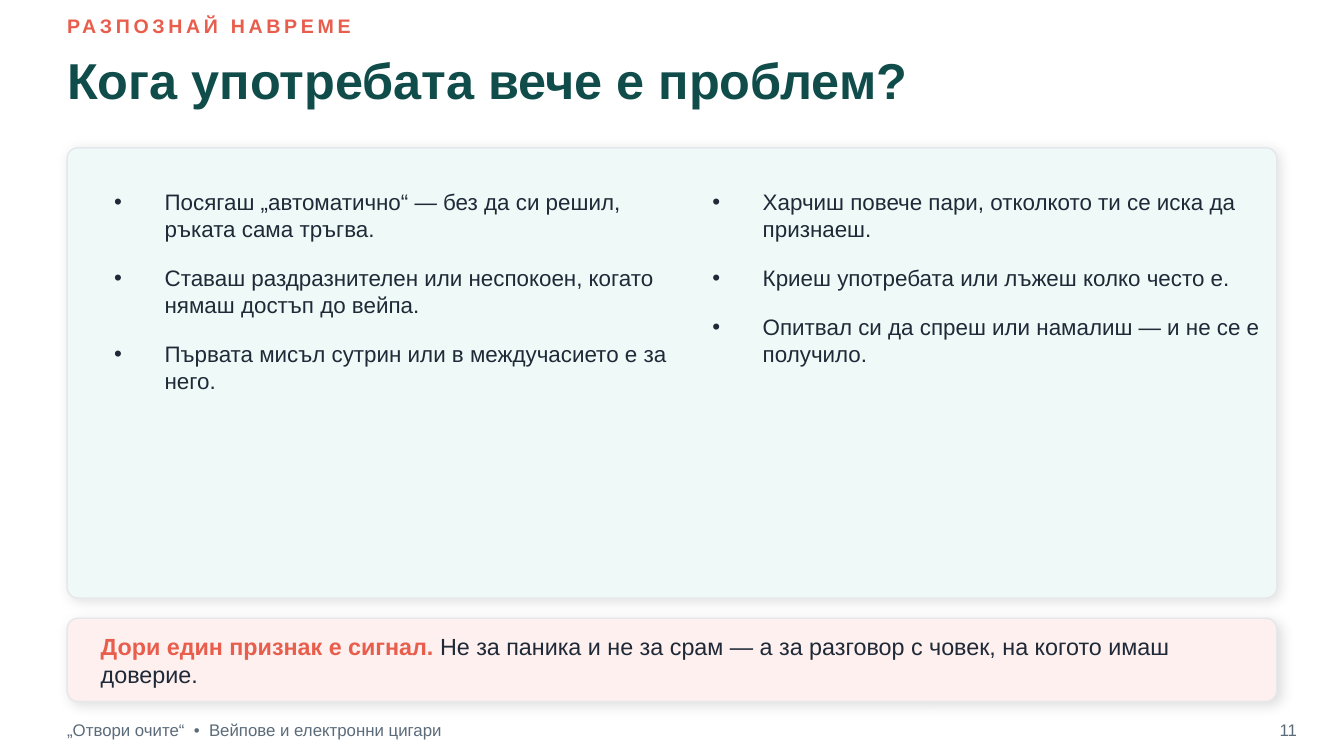
"""Build the slide on recognising when vaping has become a problem."""
import lxml.etree
import pptx
import pptx.dml.color
import pptx.enum.shapes
import pptx.enum.text
import pptx.oxml.ns
import pptx.util

RGBColor = pptx.dml.color.RGBColor
CORAL = RGBColor(0xE8, 0x5D, 0x4C)
TEAL = RGBColor(0x0F, 0x4C, 0x4A)
INK = RGBColor(0x1F, 0x29, 0x37)
SLATE = RGBColor(0x5B, 0x6B, 0x7A)
MINT = RGBColor(0xEF, 0xFA, 0xF8)
BLUSH = RGBColor(0xFD, 0xF0, 0xEE)
BORDER = RGBColor(0xE5, 0xE7, 0xEB)
WHITE = RGBColor(0xFF, 0xFF, 0xFF)

FONT = "Arial"
SLIDE_WIDTH = 10
SLIDE_HEIGHT = SLIDE_WIDTH * 9 / 16
MARGIN = 0.5
CONTENT_WIDTH = SLIDE_WIDTH - 2 * MARGIN
CORNER_RADIUS = 0.08
BULLET_INDENT = pptx.util.Pt(27)
COLUMN_LEFT, COLUMN_TOP, COLUMN_WIDTH, COLUMN_HEIGHT = 0.85, 1.4, 4.15, 2.9
COLUMN_GAP = 0.3
CALLOUT_TOP, CALLOUT_HEIGHT = 4.6, 0.62
FOOTER_TOP, FOOTER_HEIGHT = 5.28, 0.3

EYEBROW = "РАЗПОЗНАЙ НАВРЕМЕ"
TITLE = "Кога употребата вече е проблем?"
SIGNS = [
    [
        "Посягаш „автоматично“ — без да си решил, ръката сама тръгва.",
        "Ставаш раздразнителен или неспокоен, когато нямаш достъп до вейпа.",
        "Първата мисъл сутрин или в междучасието е за него.",
    ],
    [
        "Харчиш повече пари, отколкото ти се иска да признаеш.",
        "Криеш употребата или лъжеш колко често е.",
        "Опитвал си да спреш или намалиш — и не се е получило.",
    ],
]
CALLOUT = [
    ("Дори един признак е сигнал. ", CORAL, True, 0),
    ("Не за паника и не за срам — а за разговор с човек, на когото имаш доверие.", INK, False, 0),
]
WIDE_SPACE = (" ", SLATE, False, 2.5)
FOOTER = [
    ("„Отвори очите“", SLATE, False, 0),
    WIDE_SPACE,
    ("•", SLATE, False, 0),
    WIDE_SPACE,
    ("Вейпове и електронни цигари", SLATE, False, 0),
]
PAGE_NUMBER = "11"


def inches(box):
    return [pptx.util.Inches(length) for length in box]


def add_card(slide, box, color):
    shape = slide.shapes.add_shape(pptx.enum.shapes.MSO_SHAPE.ROUNDED_RECTANGLE, *inches(box))
    shape.adjustments[0] = CORNER_RADIUS / box[3]
    shape.fill.solid()
    shape.fill.fore_color.rgb = color
    shape.line.color.rgb = BORDER
    shape.line.width = pptx.util.Pt(0.75)
    shape.shadow.inherit = False
    qn = pptx.oxml.ns.qn
    effects = shape.element.spPr.find(qn("a:effectLst"))
    shadow = lxml.etree.SubElement(
        effects, qn("a:outerShdw"), blurRad=str(pptx.util.Pt(7)),
        dist=str(pptx.util.Pt(2)), dir=str(45 * 60000), algn="bl", rotWithShape="0")
    black = lxml.etree.SubElement(shadow, qn("a:srgbClr"), val="000000")
    lxml.etree.SubElement(black, qn("a:alpha"), val="13000")


def add_bullet(paragraph):
    properties = paragraph._p.get_or_add_pPr()
    properties.set("marL", str(BULLET_INDENT))
    properties.set("indent", str(-BULLET_INDENT))
    qn = pptx.oxml.ns.qn
    lxml.etree.SubElement(properties, qn("a:buFont"), typeface=FONT)
    lxml.etree.SubElement(properties, qn("a:buChar"), char="•")
    paragraph.space_after = pptx.util.Pt(12)


def add_text(slide, box, paragraphs, size, bulleted=False, align=None):
    frame = slide.shapes.add_textbox(*inches(box)).text_frame
    frame.word_wrap = True
    frame.margin_left = frame.margin_top = frame.margin_right = frame.margin_bottom = 0
    anchors = pptx.enum.text.MSO_ANCHOR
    frame.vertical_anchor = anchors.TOP if bulleted else anchors.MIDDLE
    for index, runs in enumerate(paragraphs):
        paragraph = frame.add_paragraph() if index else frame.paragraphs[0]
        paragraph.alignment = align
        if bulleted:
            add_bullet(paragraph)
        for text, color, bold, spacing in runs:
            run = paragraph.add_run()
            run.text = text
            run.font.name = FONT
            run.font.size = pptx.util.Pt(size)
            run.font.bold = bold
            run.font.color.rgb = color
            if spacing:
                run.font._element.set("spc", str(round(spacing * 100)))


def main():
    presentation = pptx.Presentation()
    presentation.slide_width, presentation.slide_height = inches((SLIDE_WIDTH, SLIDE_HEIGHT))
    slide = presentation.slides.add_slide(presentation.slide_layouts[6])
    slide.background.fill.solid()
    slide.background.fill.fore_color.rgb = WHITE

    add_text(slide, (MARGIN, 0.06, CONTENT_WIDTH, 0.26), [[(EYEBROW, CORAL, True, 2)]], 10.5)
    add_text(slide, (MARGIN, 0.28, CONTENT_WIDTH, 0.62), [[(TITLE, TEAL, True, 0)]], 27)

    add_card(slide, (MARGIN, 1.1, CONTENT_WIDTH, 3.35), MINT)
    for column, signs in enumerate(SIGNS):
        left = COLUMN_LEFT + column * (COLUMN_WIDTH + COLUMN_GAP)
        paragraphs = [[(sign, INK, False, 0)] for sign in signs]
        add_text(slide, (left, COLUMN_TOP, COLUMN_WIDTH, COLUMN_HEIGHT), paragraphs, 12, bulleted=True)

    add_card(slide, (MARGIN, CALLOUT_TOP, CONTENT_WIDTH, CALLOUT_HEIGHT), BLUSH)
    add_text(slide, (0.75, CALLOUT_TOP, 8.6, CALLOUT_HEIGHT), [CALLOUT], 12.5)

    add_text(slide, (MARGIN, FOOTER_TOP, 6, FOOTER_HEIGHT), [FOOTER], 9)
    add_text(slide, (9.3, FOOTER_TOP, 0.35, FOOTER_HEIGHT), [[(PAGE_NUMBER, SLATE, False, 0)]], 9,
             align=pptx.enum.text.PP_ALIGN.RIGHT)

    presentation.save("out.pptx")


if __name__ == "__main__":
    main()
